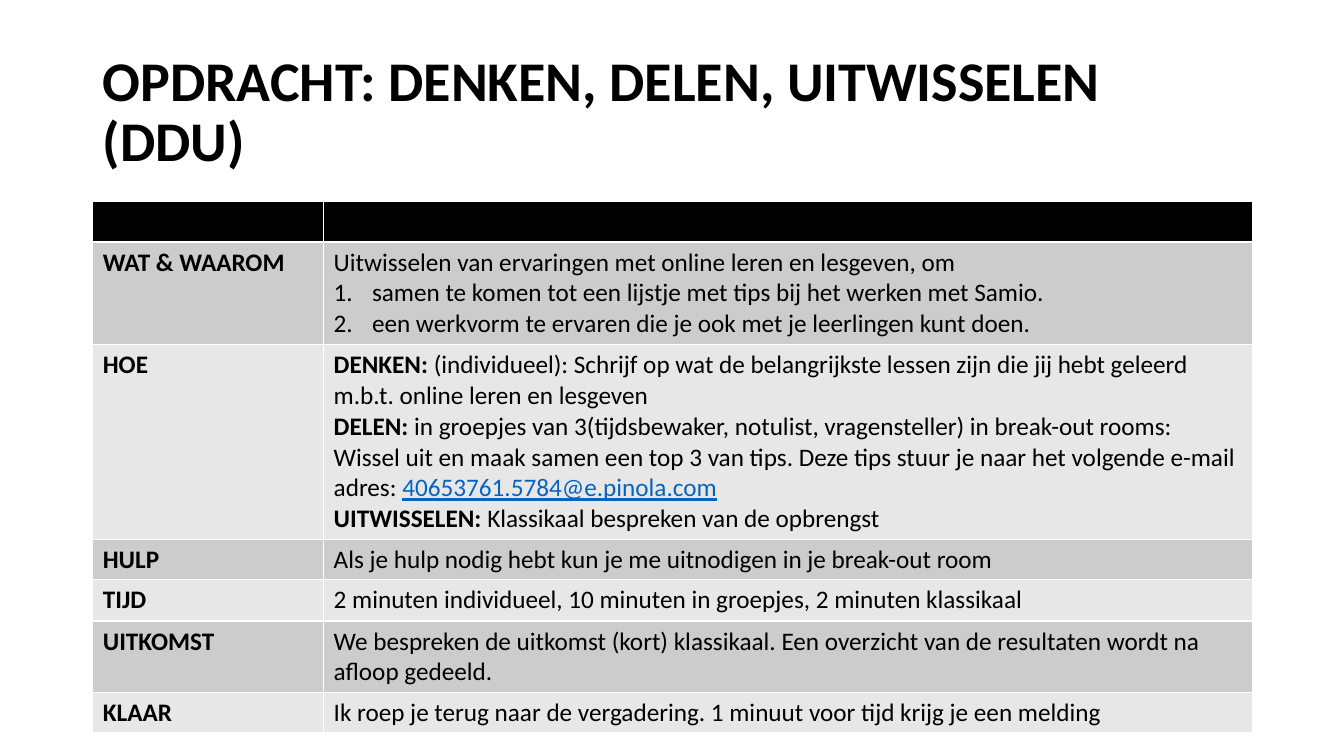
from lxml import etree
from pptx import Presentation
from pptx.dml.color import RGBColor
from pptx.enum import text
from pptx.oxml import ns
from pptx.util import Inches, Pt

BLACK = RGBColor(0x00, 0x00, 0x00)
LINK_BLUE = RGBColor(0x05, 0x63, 0xC1)
BORDER_WHITE = RGBColor(0xFF, 0xFF, 0xFF)
DARK_BAND = RGBColor(0xCC, 0xCC, 0xCC)
LIGHT_BAND = RGBColor(0xE7, 0xE7, 0xE7)

FONT = "Calibri"
PLAIN, BOLD, LINK, NUMBERED = "plain", "bold", "link", "numbered"
COLUMN_WIDTHS = (2.29, 9.21)
ROW_HEIGHTS = (0.4, 1.02, 1.93, 0.4, 0.41, 0.71, 0.4)

TITLE = "OPDRACHT: DENKEN, DELEN, UITWISSELEN (DDU)"
ASSIGNMENT = [
    ("WAT & WAAROM", [
        [("Uitwisselen van ervaringen met online leren en lesgeven, om", PLAIN)],
        [("samen te komen tot een lijstje met tips bij het werken met Samio.", NUMBERED)],
        [("een werkvorm te ervaren die je ook met je leerlingen kunt doen.", NUMBERED)],
    ]),
    ("HOE", [
        [("DENKEN: ", BOLD),
         ("(individueel): Schrijf op wat de belangrijkste lessen zijn die jij hebt "
          "geleerd m.b.t. online leren en lesgeven", PLAIN)],
        [("DELEN: ", BOLD),
         ("in groepjes van 3(tijdsbewaker, notulist, vragensteller) in break-out rooms: "
          "Wissel uit en maak samen een top 3 van tips. Deze tips stuur je naar het "
          "volgende e-mail adres: ", PLAIN),
         ("40653761.5784@e.pinola.com", LINK)],
        [("UITWISSELEN: ", BOLD), ("Klassikaal bespreken van de opbrengst", PLAIN)],
    ]),
    ("HULP", [[("Als je hulp nodig hebt kun je me uitnodigen in je break-out room", PLAIN)]]),
    ("TIJD", [[("2 minuten individueel, 10 minuten in groepjes, 2 minuten klassikaal", PLAIN)]]),
    ("UITKOMST", [[("We bespreken de uitkomst (kort) klassikaal. Een overzicht van de "
                    "resultaten wordt na afloop gedeeld.", PLAIN)]]),
    ("KLAAR", [[("Ik roep je terug naar de vergadering. 1 minuut voor tijd krijg je "
                 "een melding", PLAIN)]]),
]


def add_run(paragraph, words, style, size=18):
    run = paragraph.add_run()
    run.text = words
    font = run.font
    font.name = FONT
    font.size = Pt(size)
    font.bold = style == BOLD
    font.underline = style == LINK
    font.color.rgb = LINK_BLUE if style == LINK else BLACK


def number_paragraph(paragraph):
    properties = paragraph._p.get_or_add_pPr()
    properties.set("marL", str(Inches(0.38)))
    properties.set("indent", str(-Inches(0.38)))
    etree.SubElement(properties, ns.qn("a:buFont"), typeface="+mj-lt")
    etree.SubElement(properties, ns.qn("a:buAutoNum"), type="arabicPeriod")


def fill_text(frame, paragraphs):
    for index, runs in enumerate(paragraphs):
        paragraph = frame.add_paragraph() if index else frame.paragraphs[0]
        for words, style in runs:
            if style == NUMBERED:
                number_paragraph(paragraph)
            add_run(paragraph, words, style)


def style_cell(cell, color):
    cell.fill.solid()
    cell.fill.fore_color.rgb = color
    properties = cell._tc.get_or_add_tcPr()
    for position, side in enumerate("LRTB"):
        line = etree.Element(ns.qn(f"a:ln{side}"), w=str(Pt(1)))
        fill = etree.SubElement(line, ns.qn("a:solidFill"))
        etree.SubElement(fill, ns.qn("a:srgbClr"), val=str(BORDER_WHITE))
        properties.insert(position, line)


def add_title(slide, left, top, width, height):
    box = slide.shapes.add_textbox(Inches(left), Inches(top), Inches(width), Inches(height))
    frame = box.text_frame
    frame.word_wrap = True
    frame.vertical_anchor = text.MSO_ANCHOR.MIDDLE
    paragraph = frame.paragraphs[0]
    paragraph.line_spacing = 0.9
    add_run(paragraph, TITLE, BOLD, 40)


def add_assignment_table(slide, left, top, width):
    table = slide.shapes.add_table(
        len(ROW_HEIGHTS), len(COLUMN_WIDTHS), Inches(left), Inches(top),
        Inches(width), Inches(sum(ROW_HEIGHTS))).table
    for column, share in zip(table.columns, COLUMN_WIDTHS):
        column.width = Inches(width * share / sum(COLUMN_WIDTHS))
    for row, height in zip(table.rows, ROW_HEIGHTS):
        row.height = Inches(height)
    for cell in table.rows[0].cells:
        style_cell(cell, BLACK)
    for index, (label, paragraphs) in enumerate(ASSIGNMENT):
        label_cell, content_cell = table.rows[index + 1].cells
        fill_text(label_cell.text_frame, [[(label, BOLD)]])
        fill_text(content_cell.text_frame, paragraphs)
        for cell in (label_cell, content_cell):
            style_cell(cell, LIGHT_BAND if index % 2 else DARK_BAND)


def main():
    presentation = Presentation()
    presentation.slide_width = Inches(13.33)
    presentation.slide_height = Inches(7.5)
    slide = presentation.slides.add_slide(presentation.slide_layouts[6])
    add_title(slide, 0.92, 0.4, 11.5, 1.45)
    add_assignment_table(slide, 0.92, 2, 11.5)
    presentation.save("out.pptx")


if __name__ == "__main__":
    main()
